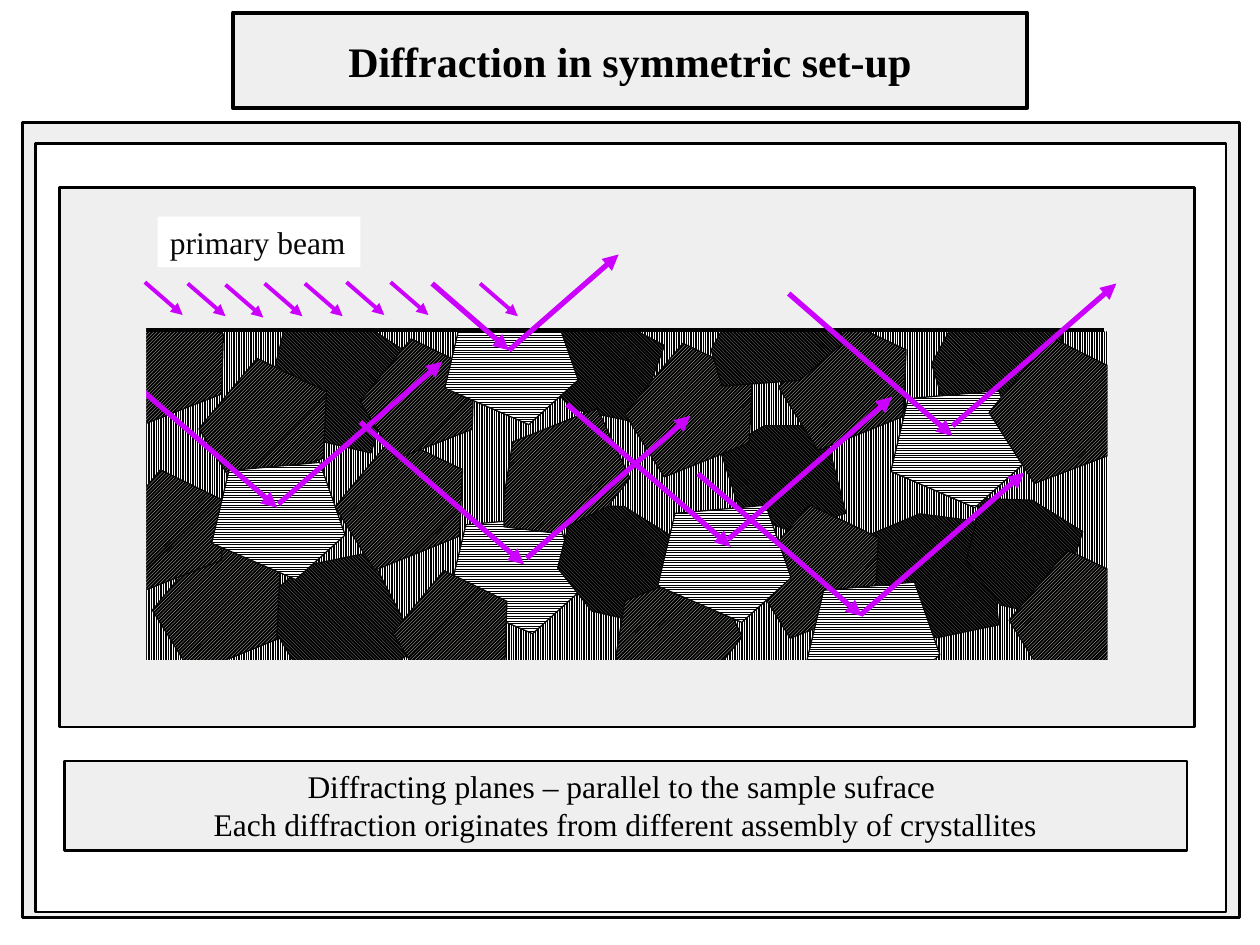
from lxml import etree
from pptx import Presentation
from pptx.dml.color import RGBColor
from pptx.enum.dml import MSO_PATTERN
from pptx.enum.shapes import MSO_CONNECTOR, MSO_SHAPE
from pptx.enum.text import MSO_ANCHOR, MSO_AUTO_SIZE, PP_ALIGN
from pptx.oxml.ns import qn
from pptx.util import Inches, Pt

STRAIGHT = MSO_CONNECTOR.STRAIGHT
RECT = MSO_SHAPE.RECTANGLE
CENTER, LEFT = PP_ALIGN.CENTER, PP_ALIGN.LEFT
MIDDLE, TOP = MSO_ANCHOR.MIDDLE, MSO_ANCHOR.TOP
FIT = MSO_AUTO_SIZE.SHAPE_TO_FIT_TEXT
HORIZ, VERT = MSO_PATTERN.LIGHT_HORIZONTAL, MSO_PATTERN.LIGHT_VERTICAL
DOWN = MSO_PATTERN.LIGHT_DOWNWARD_DIAGONAL
UP = MSO_PATTERN.LIGHT_UPWARD_DIAGONAL

BLACK, WHITE, GREY, INK, BEAM = "000000", "FFFFFF", "EFEFEF", "080808", "CC00FF"

PENTAGON = [(0.13, 0.07), (0.81, 0), (1, 0.62), (0.63, 1), (0, 0.69)]
HEXAGON = [(0.22, 0), (1, 0.15), (0.95, 0.65), (0.61, 1), (0.04, 0.93), (0, 0.48)]
HEPTAGON = [(0.07, 0.27), (0.74, 0), (1, 0.56), (0.82, 0.79), (0.4, 1),
            (0, 0.95), (0, 0.71)]

PLANES = (PENTAGON, HORIZ, BLACK, WHITE, 0)
TILTED = (PENTAGON, UP, "EEECE1", BLACK, 314.7)
UPRIGHT = (HEPTAGON, UP, "EEECE1", BLACK, 0)


def dark(fore, angle):
    return HEXAGON, DOWN, fore, BLACK, angle


MID, DIM = "969696", "777777"
BIG, SMALL, FLAT = (1.06, 0.93), (0.94, 0.85), (1.08, 0.66)
WIDE, ROUND, TALL = (1.08, 1.01), (0.9, 0.89), (1, 0.99)

CRYSTALLITES = [
    (3.56, 4.1, BIG, PLANES),
    (2.12, 2.51, WIDE, dark(MID, 97.1)),
    (4.43, 4.02, ROUND, dark(DIM, 97.1)),
    (5.79, 3.35, ROUND, dark(DIM, 65.1)),
    (4.34, 2.4, (0.81, 1.01), dark(DIM, 97.1)),
    (6.92, 4.07, (1.03, 1.01), dark(DIM, 72.4)),
    (2.17, 4.43, WIDE, dark(MID, 52.5)),
    (1.24, 4.38, BIG, TILTED),
    (2.69, 3.56, BIG, TILTED),
    (1.61, 2.94, BIG, TILTED),
    (4.99, 2.82, BIG, TILTED),
    (5.99, 4.1, BIG, TILTED),
    (6.21, 2.61, BIG, TILTED),
    (4, 3.24, TALL, UPRIGHT),
    (4.89, 4.5, TALL, UPRIGHT),
    (3.15, 4.61, SMALL, TILTED),
    (0.9, 3.81, SMALL, TILTED),
    (6.4, 4.62, BIG, PLANES),
    (2.89, 2.77, SMALL, TILTED),
    (5.64, 2.38, FLAT, dark(MID, 351.4)),
    (7.39, 2.49, FLAT, dark(MID, 351.4)),
    (7.67, 3.97, ROUND, dark(DIM, 97.1)),
    (8.04, 4.46, BIG, TILTED),
    (5.22, 4.01, BIG, PLANES),
    (1.68, 3.67, BIG, PLANES),
    (3.53, 2.44, BIG, PLANES),
    (7.07, 3.1, BIG, PLANES),
    (7.9, 2.77, (1.13, 1.05), TILTED),
    (0.9, 2.49, SMALL, TILTED),
]

BEAM_STARTS = [(1.15, 2.24), (1.49, 2.25), (1.79, 2.26), (2.1, 2.25),
               (2.42, 2.25), (2.75, 2.24), (3.1, 2.24), (3.81, 2.25)]
INCIDENT_STARTS = [(0.9, 2.9), (2.86, 3.35), (4.5, 3.21), (5.54, 3.76), (6.26, 2.33)]
REFLECTED_STARTS = [(2.21, 4), (4.18, 4.43), (5.78, 4.28), (6.83, 4.88), (7.56, 3.38)]


def rgb(value):
    return RGBColor.from_string(value)


class Deck:
    font = "Times New Roman"

    def __init__(self):
        self.prs = Presentation()
        self.prs.slide_width, self.prs.slide_height = Inches(10), Inches(7.5)
        self.s = self.prs.slides.add_slide(self.prs.slide_layouts[6])

    def outline(self, shape, color, width):
        if width:
            shape.line.color.rgb = rgb(color)
            shape.line.width = Pt(width)
        else:
            shape.line.fill.background()

    def hatch(self, shape, pattern, fore, back):
        shape.fill.patterned()
        shape.fill.pattern = pattern
        shape.fill.fore_color.rgb = rgb(fore)
        shape.fill.back_color.rgb = rgb(back)

    def box(self, x, y, w, h, fill=GREY, line=0):
        sp = self.s.shapes.add_shape(RECT, Inches(x), Inches(y), Inches(w), Inches(h))
        sp.shadow.inherit = False
        sp.fill.solid()
        sp.fill.fore_color.rgb = rgb(fill)
        self.outline(sp, BLACK, line)
        return sp

    def text(self, sp, lines, size, color=BLACK, bold=False, align=CENTER,
             anchor=TOP, wrap=True, fit=True):
        tf = sp.text_frame
        tf.word_wrap = wrap
        tf.vertical_anchor = anchor
        if fit:
            tf.auto_size = FIT
        for i, line in enumerate(lines):
            p = tf.add_paragraph() if i else tf.paragraphs[0]
            p.alignment = align
            r = p.add_run()
            r.text = line
            r.font.name, r.font.size, r.font.bold = self.font, Pt(size), bold
            r.font.color.rgb = rgb(color)

    def crystallite(self, x, y, size, style):
        points, pattern, fore, back, angle = style
        w, h = size
        corners = [(Inches(x + w * u), Inches(y + h * v)) for u, v in points]
        fb = self.s.shapes.build_freeform(*corners[0])
        fb.add_line_segments(corners[1:], close=True)
        sp = fb.convert_to_shape()
        sp.shadow.inherit = False
        sp.rotation = angle
        self.hatch(sp, pattern, fore, back)
        self.outline(sp, INK, 0.75)

    def line(self, start, dx, dy, color=BEAM, width=3, arrow=True):
        x, y = start
        c = self.s.shapes.add_connector(STRAIGHT, Inches(x), Inches(y),
                                        Inches(x + dx), Inches(y + dy))
        self.outline(c, color, width)
        if arrow:
            etree.SubElement(c.line._get_or_add_ln(), qn("a:tailEnd"), type="triangle")
        etree.SubElement(c._element.spPr, qn("a:effectLst"))


def main():
    d = Deck()
    d.box(0.18, 0.97, 9.66, 6.31, line=1.5)
    d.box(0.28, 1.14, 9.45, 6.1, WHITE, 1.5)
    d.box(0.47, 1.49, 9.01, 4.28, line=1.5)
    sample = d.box(0.96, 2.47, 7.97, 2.95, line=0.75)
    d.hatch(sample, VERT, WHITE, BLACK)
    title = d.box(1.85, 0.1, 6.3, 0.76, line=2.25)
    d.text(title, ["Diffraction in symmetric set-up"], 24, bold=True,
           anchor=MIDDLE, fit=False)

    for crystallite in CRYSTALLITES:
        d.crystallite(*crystallite)
    d.box(0.71, 2.23, 8.56, 0.4)
    d.box(0.75, 5.24, 8.56, 0.4)
    d.line((1.15, 2.62), 7.61, 0, BLACK, 2.25, arrow=False)

    for start in BEAM_STARTS:
        d.line(start, 0.3, 0.26, width=2.25)
    d.line((3.43, 2.25), 0.61, 0.53)
    label = d.box(1.25, 1.72, 1.61, 0.4, WHITE)
    d.text(label, ["primary beam"], 18, INK, align=LEFT, wrap=False)
    for start in INCIDENT_STARTS:
        d.line(start, 1.3, 1.13)
    for start in REFLECTED_STARTS:
        d.line(start, 1.3, -1.13)
    d.line((4.04, 2.78), 0.87, -0.76)

    caption = d.box(0.51, 6.04, 8.91, 0.71, line=1.5)
    d.text(caption, ["Diffracting planes – parallel to the sample sufrace ",
                     "Each diffraction originates from different assembly of crystallites"], 18)
    d.box(0.77, 2.47, 0.39, 2.81)
    d.box(8.79, 2.52, 0.39, 2.81)
    d.prs.save("out.pptx")


if __name__ == "__main__":
    main()
